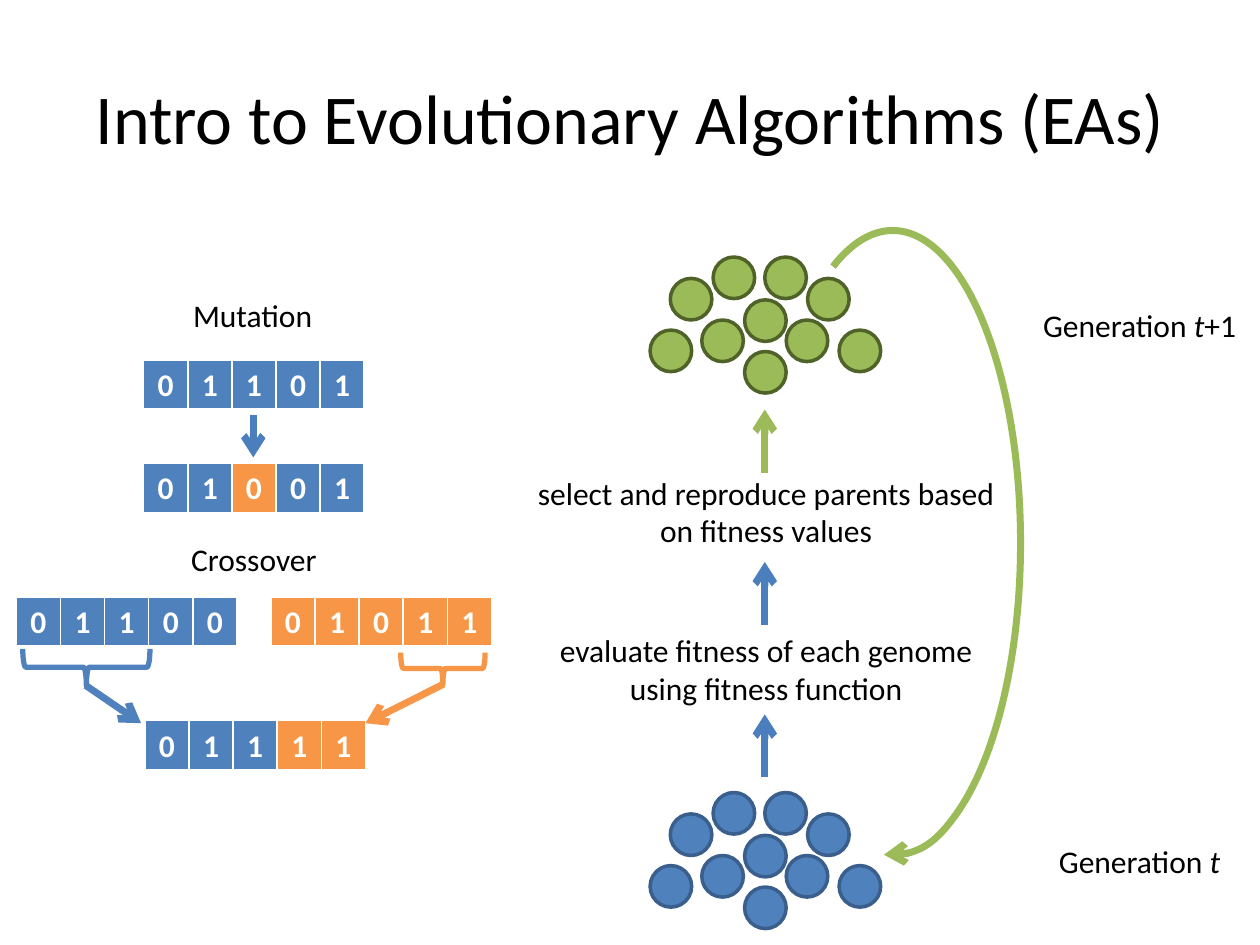
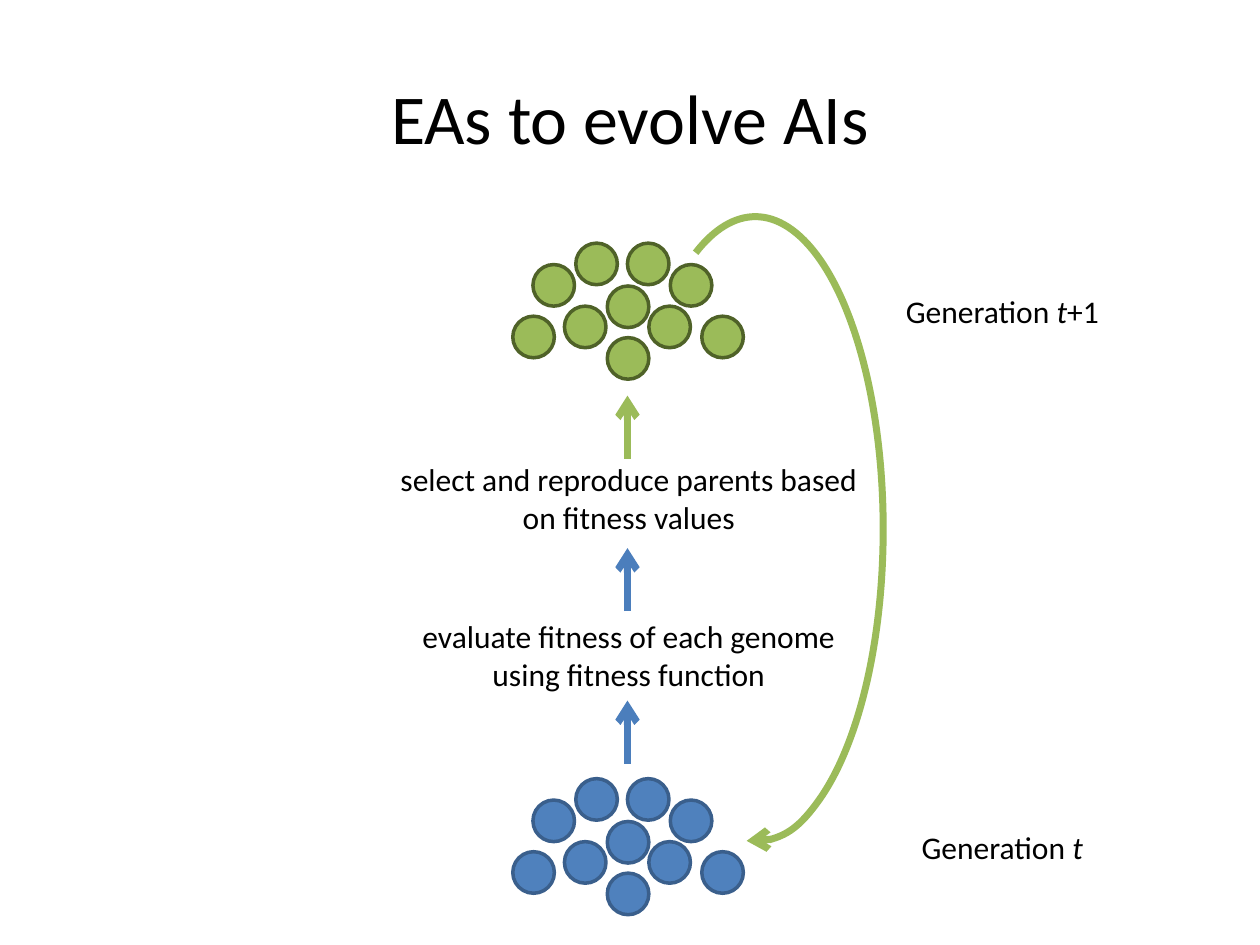
from dataclasses import dataclass

from lxml.etree import SubElement
from pptx import Presentation
from pptx.dml.color import RGBColor
from pptx.enum.shapes import MSO_CONNECTOR as Connector, MSO_SHAPE as Preset
from pptx.enum.text import MSO_ANCHOR as Anchor, MSO_AUTO_SIZE as AutoSize, PP_ALIGN as Align
from pptx.oxml.ns import qn
from pptx.util import Emu, Pt

EMU_PER_PX = 9144  # 100 px to the inch
TITLE_ONLY = 5


@dataclass(frozen=True)
class Theme:
    font: str = "Calibri"
    black: str = "000000"
    white: str = "FFFFFF"
    blue: str = "4F81BD"
    blue_edge: str = "3A5F8C"
    blue_arrow: str = "4B7EBC"
    green: str = "9BBB59"
    green_edge: str = "4F6228"
    orange: str = "F79646"
    title_size: int = 40
    body_size: int = 18
    arrow_width: int = 4
    brace_width: int = 3
    edge_width: int = 2


def px(length):
    return Emu(length * EMU_PER_PX)


def rgb(color):
    return RGBColor.from_string(color)


class Deck:
    """Holds the theme and the current slide, and draws each kind of element."""

    def __init__(self, theme):
        self.theme = theme
        self.presentation = Presentation()
        self.presentation.slide_width = px(1000)
        self.presentation.slide_height = px(750)
        self.slide = None

    def new_slide(self, title):
        layout = self.presentation.slide_layouts[TITLE_ONLY]
        self.slide = self.presentation.slides.add_slide(layout)
        shape = self.slide.shapes.title
        shape.left, shape.top, shape.width, shape.height = map(px, (50, 30, 900, 125))
        frame = shape.text_frame
        frame.auto_size = AutoSize.NONE
        frame.vertical_anchor = Anchor.MIDDLE
        self.add_runs(frame, [(title, False)], self.theme.title_size)

    def add_runs(self, frame, runs, size, color=None, bold=False):
        paragraph = frame.paragraphs[0]
        paragraph.alignment = Align.CENTER
        for text, italic in runs:
            run = paragraph.add_run()
            run.text = text
            font = run.font
            font.name, font.size = self.theme.font, Pt(size)
            font.bold, font.italic = bold, italic
            font.color.rgb = rgb(color or self.theme.black)

    def text(self, left, top, width, height, *runs):
        frame = self.slide.shapes.add_textbox(*map(px, (left, top, width, height))).text_frame
        frame.word_wrap = True
        self.add_runs(frame, runs, self.theme.body_size)

    def stroke(self, line, color, width, arrow=False):
        line.color.rgb = rgb(color)
        line.width = Pt(width)
        if arrow:
            SubElement(line._get_or_add_ln(), qn("a:tailEnd"), type="arrow")

    def shape(self, preset, box, color, width, fill=None, adjustments=(), arrow=False,
              rotation=0, parent=None):
        shape = (parent or self.slide).shapes.add_shape(preset, *map(px, box))
        shape.shadow.inherit = False
        shape.rotation = rotation
        for index, value in enumerate(adjustments):
            shape.adjustments[index] = value
        if fill:
            shape.fill.solid()
            shape.fill.fore_color.rgb = rgb(fill)
        else:
            shape.fill.background()
        self.stroke(shape.line, color, width, arrow)

    def arrow(self, start, end, color):
        connector = self.slide.shapes.add_connector(Connector.STRAIGHT, *map(px, start + end))
        self.stroke(connector.line, color, self.theme.arrow_width, arrow=True)
        SubElement(connector._element.spPr, qn("a:effectLst"))

    def brace(self, box, color):
        self.shape(Preset.RIGHT_BRACE, box, color, self.theme.brace_width,
                   adjustments=(0.083, 0.5), rotation=90)

    def border(self, cell):
        properties = cell._tc.get_or_add_tcPr()
        for side, width in (("L", 1), ("R", 1), ("T", 1), ("B", 3)):
            line = SubElement(properties, qn(f"a:ln{side}"), w=str(int(Pt(width))))
            fill = SubElement(line, qn("a:solidFill"))
            SubElement(fill, qn("a:srgbClr"), val=self.theme.white)

    def genome(self, left, top, bits, fills):
        """One-row table with a fill for each bit."""
        gene_width = 35
        box = (left, top, gene_width * len(bits), 40)
        table = self.slide.shapes.add_table(1, len(bits), *map(px, box)).table
        for index, (bit, fill) in enumerate(zip(bits, fills)):
            table.columns[index].width = px(gene_width)
            cell = table.cell(0, index)
            self.border(cell)
            cell.fill.solid()
            cell.fill.fore_color.rgb = rgb(fill)
            self.add_runs(cell.text_frame, [(bit, False)], self.theme.body_size,
                          self.theme.white, bold=True)

    def population(self, axis, top, fill, edge):
        """Ten individuals, grouped around a vertical axis."""
        individuals = ((75, 34), (0, 58), (16, 17), (50, 0), (41, 50),
                       (108, 50), (75, 75), (150, 58), (91, 0), (125, 17))
        group = self.slide.shapes.add_group_shape()
        for x, y in individuals:
            self.shape(Preset.OVAL, (axis - 91 + x, top + y, 33, 33), edge,
                       self.theme.edge_width, fill, parent=group)

    def evolution_cycle(self, axis, top):
        theme = self.theme
        generation_gap = 425

        # Populations and their labels
        self.population(axis, top, theme.green, theme.green_edge)
        self.population(axis, top + generation_gap, theme.blue, theme.blue_edge)
        label = (("Generation ", False), ("t", True))
        self.text(axis + 156, top + 34, 283, 40, *label, ("+1", False))
        self.text(axis + 156, top + 34 + generation_gap, 283, 40, *label)

        # Steps from one generation to the next
        self.text(axis - 195, top + 167, 392, 71,
                  ("select and reproduce parents based on fitness values", False))
        self.text(axis - 195, top + 292, 392, 71,
                  ("evaluate fitness of each genome using fitness function", False))
        for tip, color in ((121, theme.green), (242, theme.blue_arrow), (363, theme.blue_arrow)):
            self.arrow((axis, top + tip + 50), (axis, top + tip), color)

        # Return loop
        self.shape(Preset.ARC, (axis, top - 21, 203, 496), theme.green, theme.arrow_width,
                   adjustments=(154.689, 54.957), arrow=True)


def draw_mutation(deck):
    blue, orange = deck.theme.blue, deck.theme.orange
    deck.text(59, 230, 283, 40, ("Mutation", False))
    deck.genome(114, 286, "01101", [blue] * 5)
    deck.arrow((201, 329), (201, 363), deck.theme.blue_arrow)
    deck.genome(114, 368, "01001", [blue, blue, orange, blue, blue])


def draw_crossover(deck):
    blue, orange = deck.theme.blue, deck.theme.orange
    deck.text(60, 424, 283, 40, ("Crossover", False))
    deck.genome(13, 474, "01100", [blue] * 5)
    deck.genome(215, 474, "01011", [orange] * 5)
    deck.genome(115, 572, "01111", [blue] * 3 + [orange] * 2)
    deck.arrow((352, 543), (290, 574), orange)
    deck.brace((339, 497, 25, 67), orange)
    deck.arrow((68, 544), (112, 574), blue)
    deck.brace((54, 479, 29, 101), blue)


def main():
    deck = Deck(Theme())

    # Slide 1: operators beside the cycle
    deck.new_slide("Intro to Evolutionary Algorithms (EAs)")
    deck.evolution_cycle(axis=607, top=204)
    draw_mutation(deck)
    draw_crossover(deck)

    # Slide 2: the cycle alone
    deck.new_slide("EAs to evolve AIs")
    deck.evolution_cycle(axis=498, top=193)

    deck.presentation.save("out.pptx")


if __name__ == "__main__":
    main()
